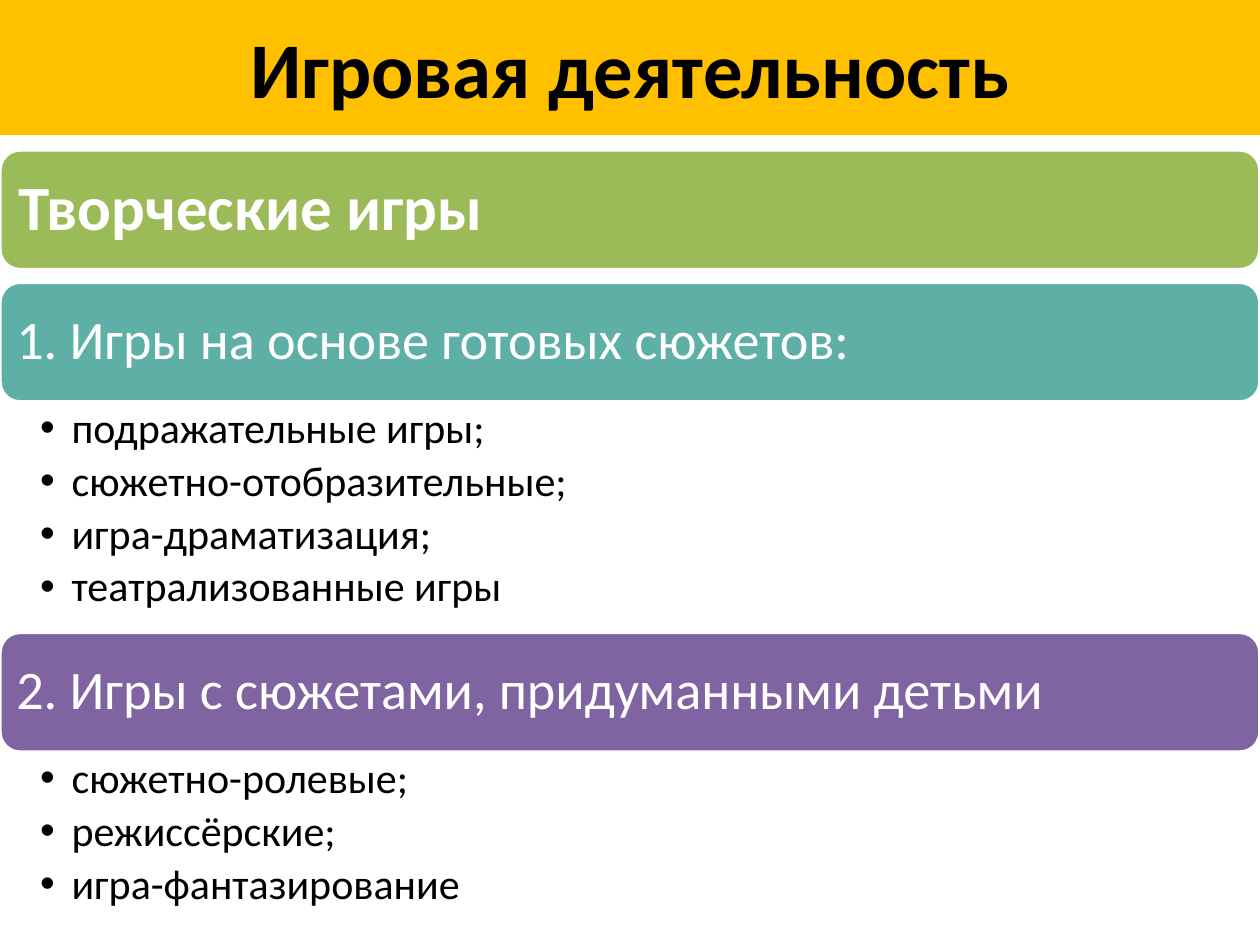
"""Build a slide that outlines the kinds of creative play."""
import pptx
import pptx.util
from lxml import etree
from pptx.dml.color import RGBColor
from pptx.enum.shapes import MSO_SHAPE
from pptx.enum.text import MSO_ANCHOR, PP_ALIGN
from pptx.oxml.ns import qn

Pt = pptx.util.Pt

AMBER = RGBColor(0xFF, 0xC0, 0x00)
GREEN = RGBColor(0x9B, 0xBB, 0x59)
TEAL = RGBColor(0x5E, 0xAF, 0xA6)
PURPLE = RGBColor(0x80, 0x64, 0xA2)
WHITE = RGBColor(0xFF, 0xFF, 0xFF)
BLACK = RGBColor(0x00, 0x00, 0x00)

TITLE = "Игровая деятельность"
SECTIONS = [
    {"head": "Творческие игры", "color": GREEN, "size": 36, "bold": True,
     "inset": 7.5, "items": [], "below": 7.2},
    {"head": "1. Игры на основе готовых сюжетов:", "color": TEAL, "size": 31,
     "bold": False, "inset": 6, "below": 131.7,
     "items": ["подражательные игры;", "сюжетно-отобразительные;",
               "игра-драматизация;", "театрализованные игры"]},
    {"head": "2. Игры с сюжетами, придуманными детьми", "color": PURPLE,
     "size": 31, "bold": False, "inset": 6, "below": 108.7,
     "items": ["сюжетно-ролевые;", "режиссёрские;", "игра-фантазирование"]},
]
WIDTH, HEIGHT = 720, 540
TITLE_H, FIRST_TOP, BAR_H = 77, 85.7, 68.4
INDENT = 18


def set_insets(tf, left, top, right, bottom):
    tf.word_wrap = True
    tf.margin_left, tf.margin_top = Pt(left), Pt(top)
    tf.margin_right, tf.margin_bottom = Pt(right), Pt(bottom)


def style(p, size, color, bold=False):
    for r in p.runs:
        r.font.name = "Calibri"
        r.font.size = Pt(size)
        r.font.bold = bold
        r.font.color.rgb = color


def add_bar(s, kind, top, height, fill, line, line_width, text):
    sp = s.shapes.add_shape(kind, 0, Pt(top), Pt(WIDTH), Pt(height))
    sp.shadow.inherit = False
    sp.fill.solid()
    sp.fill.fore_color.rgb = fill
    sp.line.color.rgb = line
    sp.line.width = Pt(line_width)
    tf = sp.text_frame
    tf.text = text
    tf.vertical_anchor = MSO_ANCHOR.MIDDLE
    return tf


def add_list(s, top, height, items):
    sp = s.shapes.add_textbox(0, Pt(top), Pt(WIDTH), Pt(height))
    tf = sp.text_frame
    set_insets(tf, 22.9, 2.9, 17.3, 2.9)
    tf.text = "\n".join(items)
    for p in tf.paragraphs:
        p.level = 1
        p.line_spacing = 0.9
        p.space_after = Pt(4.3)
        style(p, 24, BLACK)
        pPr = p._p.get_or_add_pPr()
        pPr.set("marL", str(Pt(INDENT)))
        pPr.set("indent", str(-Pt(INDENT)))
        etree.SubElement(pPr, qn("a:buFont"), typeface="Arial")
        etree.SubElement(pPr, qn("a:buChar"), char="•")


def main():
    prs = pptx.Presentation()
    prs.slide_width, prs.slide_height = Pt(WIDTH), Pt(HEIGHT)
    s = prs.slides.add_slide(prs.slide_layouts[6])

    tf = add_bar(s, MSO_SHAPE.RECTANGLE, 0, TITLE_H, AMBER, AMBER, 0.75, TITLE)
    tf.paragraphs[0].alignment = PP_ALIGN.CENTER
    style(tf.paragraphs[0], 45, BLACK, True)

    top = FIRST_TOP
    for section in SECTIONS:
        tf = add_bar(s, MSO_SHAPE.ROUNDED_RECTANGLE, top, BAR_H,
                     section["color"], WHITE, 2, section["head"])
        set_insets(tf, *[section["inset"]] * 4)
        p = tf.paragraphs[0]
        p.alignment = PP_ALIGN.LEFT
        p.line_spacing = 0.9
        style(p, section["size"], WHITE, section["bold"])
        top += BAR_H
        if section["items"]:
            add_list(s, top, section["below"], section["items"])
        top += section["below"]

    prs.save("out.pptx")


if __name__ == "__main__":
    main()
